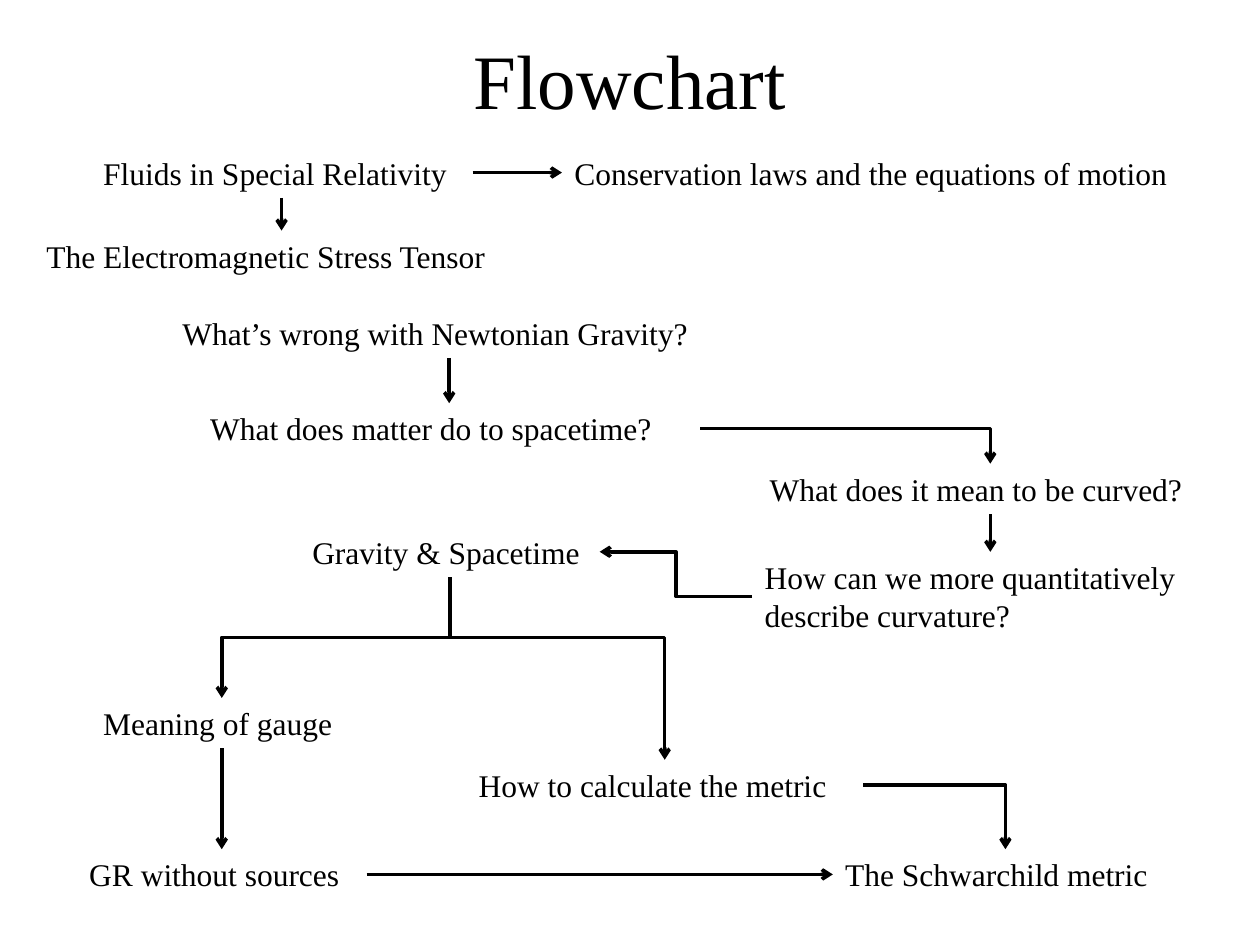
from dataclasses import dataclass

from lxml.etree import SubElement
from pptx import Presentation
from pptx.dml.color import RGBColor
from pptx.enum.shapes import MSO_CONNECTOR
from pptx.enum.text import MSO_ANCHOR, MSO_AUTO_SIZE, PP_ALIGN
from pptx.oxml.ns import qn
from pptx.util import Inches, Pt

BLACK = RGBColor(0x00, 0x00, 0x00)
FONT = "Times New Roman"


@dataclass(frozen=True)
class Node:
    text: str
    left: float
    top: float
    width: float
    height: float = 0.4
    wrap: bool = False

    def point(self, side: str) -> tuple[float, float]:
        """Middle of one side: l, r, t or b."""
        cx, cy = self.left + self.width / 2, self.top + self.height / 2
        return {"l": (self.left, cy), "r": (self.left + self.width, cy),
                "t": (cx, self.top), "b": (cx, self.top + self.height)}[side]


@dataclass(frozen=True)
class Arrow:
    start: str
    sides: str  # leaving side, then arriving side
    end: str
    bent: bool = False
    bend_at: float = 0.5


NODES = {
    "fluids": Node("Fluids in Special Relativity", 0.72, 1.17, 3.03),
    "laws": Node("Conservation laws and the equations of motion", 4.46, 1.17, 5.25),
    "tensor": Node("The Electromagnetic Stress Tensor", 0.27, 1.83, 3.93),
    "newton": Node("What’s wrong with Newtonian Gravity?", 1.35, 2.44, 4.43),
    "matter": Node("What does matter do to spacetime?", 1.57, 3.2, 3.99),
    "curved": Node("What does it mean to be curved?", 6.01, 3.68, 3.7),
    "curvature": Node("How can we more quantitatively describe curvature?",
                      5.97, 4.38, 3.77, 0.71, wrap=True),
    "gravity": Node("Gravity & Spacetime", 2.38, 4.18, 2.38),
    "gauge": Node("Meaning of gauge", 0.72, 5.54, 2.08),
    "vacuum": Node("GR without sources", 0.61, 6.74, 2.3),
    "calculate": Node("How to calculate the metric", 3.7, 6.03, 3.15),
    "metric": Node("The Schwarchild metric", 6.61, 6.74, 2.74),
}

ARROWS = [
    Arrow("fluids", "rl", "laws"),
    Arrow("fluids", "bt", "tensor"),
    Arrow("newton", "bt", "matter"),
    Arrow("matter", "rt", "curved", bent=True),
    Arrow("curved", "bt", "curvature"),
    Arrow("curvature", "lr", "gravity", bent=True),
    Arrow("gravity", "bt", "gauge", bent=True),
    Arrow("gauge", "bt", "vacuum"),
    Arrow("gravity", "bt", "calculate", bent=True, bend_at=0.33),
    Arrow("calculate", "rt", "metric", bent=True),
    Arrow("vacuum", "rl", "metric"),
]


def write(tf, text: str, *, size: int, align=PP_ALIGN.LEFT, anchor=MSO_ANCHOR.TOP) -> None:
    tf.vertical_anchor = anchor
    p = tf.paragraphs[0]
    p.alignment = align
    r = p.add_run()
    r.text = text
    r.font.name = FONT
    r.font.size = Pt(size)
    r.font.color.rgb = BLACK


def add_node(s, node: Node) -> None:
    sp = s.shapes.add_textbox(Inches(node.left), Inches(node.top),
                              Inches(node.width), Inches(node.height))
    tf = sp.text_frame
    tf.word_wrap = node.wrap
    tf.auto_size = MSO_AUTO_SIZE.SHAPE_TO_FIT_TEXT
    write(tf, node.text, size=18)


def turn_downward(c, dx: float) -> None:
    """Rotate an elbow so that it leaves its start vertically."""
    cx, cy = c.left + c.width // 2, c.top + c.height // 2
    c.width, c.height = c.height, c.width
    c.left, c.top = cx - c.width // 2, cy - c.height // 2
    xfrm = c._element.spPr.find(qn("a:xfrm"))
    xfrm.attrib.pop("flipH", None)
    xfrm.set("rot", str((270 if dx > 0 else 90) * 60000))
    if dx > 0:
        xfrm.set("flipH", "1")


def add_arrow(s, arrow: Arrow) -> None:
    x1, y1 = NODES[arrow.start].point(arrow.sides[0])
    x2, y2 = NODES[arrow.end].point(arrow.sides[1])
    if not arrow.bent:  # keep straight arrows exactly level or upright
        x2, y2 = (x1, y2) if arrow.sides == "bt" else (x2, y1)
    kind = MSO_CONNECTOR.ELBOW if arrow.bent else MSO_CONNECTOR.STRAIGHT
    c = s.shapes.add_connector(kind, Inches(x1), Inches(y1), Inches(x2), Inches(y2))
    c.line.color.rgb = BLACK
    c.line.width = Pt(2)
    spPr = c._element.spPr
    SubElement(spPr.find(qn("a:ln")), qn("a:tailEnd"), type="arrow")
    SubElement(spPr, qn("a:effectLst"))

    if arrow.bent:
        geom = spPr.find(qn("a:prstGeom"))
        if arrow.sides == "rt":
            geom.set("prst", "bentConnector2")
        elif arrow.sides == "bt":
            turn_downward(c, x2 - x1)
        if arrow.bend_at != 0.5:
            av = geom.find(qn("a:avLst"))
            if av is None:
                av = SubElement(geom, qn("a:avLst"))
            SubElement(av, qn("a:gd"), name="adj1",
                       fmla=f"val {round(arrow.bend_at * 100000)}")


def main() -> None:
    prs = Presentation()
    prs.slide_width, prs.slide_height = Inches(10), Inches(7.5)
    s = prs.slides.add_slide(prs.slide_layouts[5])

    # Title
    title = s.shapes.title
    title.left, title.top = Inches(0.5), Inches(0)
    title.width, title.height = Inches(9), Inches(1.25)
    write(title.text_frame, "Flowchart", size=44,
          align=PP_ALIGN.CENTER, anchor=MSO_ANCHOR.MIDDLE)

    # Topics and the arrows between them
    for node in NODES.values():
        add_node(s, node)
    for arrow in ARROWS:
        add_arrow(s, arrow)

    prs.save("out.pptx")


if __name__ == "__main__":
    main()
